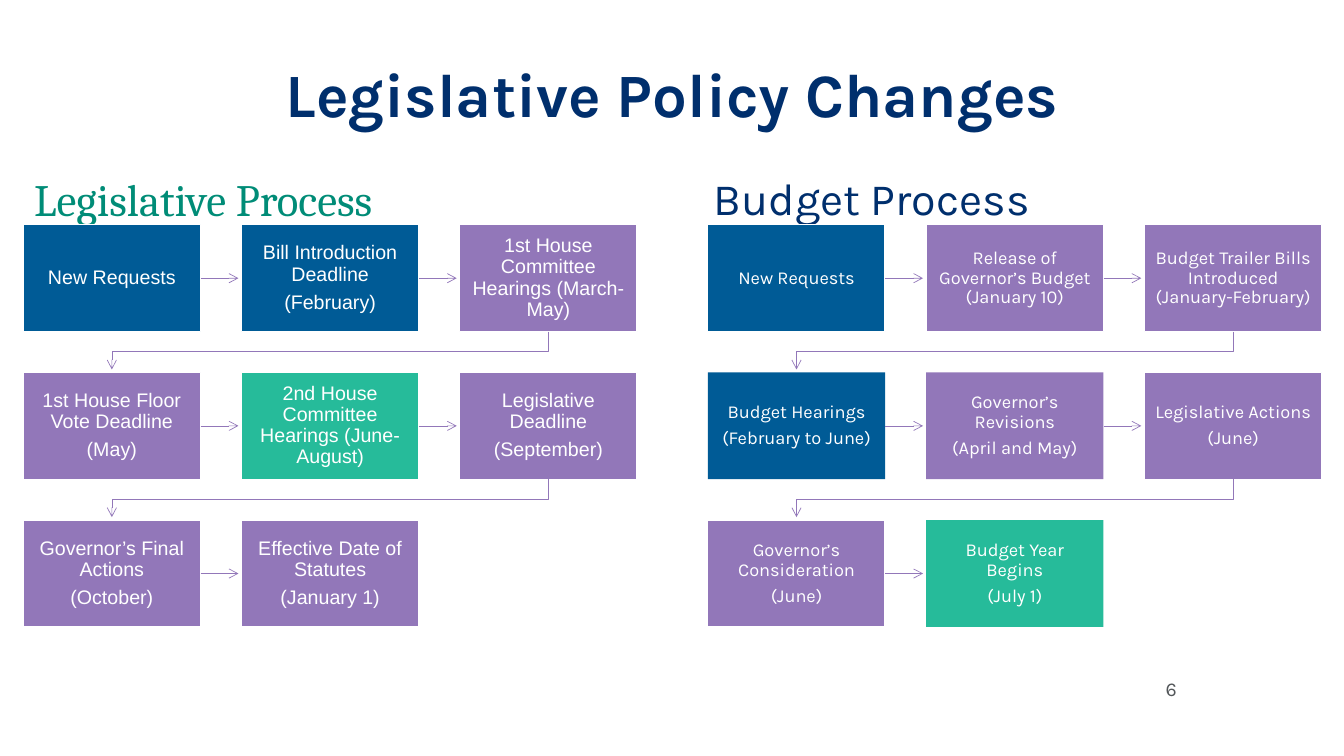
from lxml import etree
from pptx import Presentation
from pptx.dml.color import RGBColor
from pptx.enum.shapes import MSO_CONNECTOR, MSO_SHAPE
from pptx.enum.text import MSO_ANCHOR, PP_ALIGN
from pptx.oxml.ns import qn
from pptx.util import Inches, Pt

LEFT, CENTER, RIGHT = PP_ALIGN.LEFT, PP_ALIGN.CENTER, PP_ALIGN.RIGHT
MIDDLE, BOTTOM = MSO_ANCHOR.MIDDLE, MSO_ANCHOR.BOTTOM
RECT, STRAIGHT = MSO_SHAPE.RECTANGLE, MSO_CONNECTOR.STRAIGHT

BLUE, PURPLE, GREEN = "005B96", "9277B9", "26BB9A"
NAVY, TEAL, GREY, WHITE = "002F6D", "008C77", "53575A", "FFFFFF"

COLS = 3
BOX_W, BOX_H = 1.76, 1.06
STEP_X, STEP_Y = 4.33 / 2, 2.93 / 2
GAP = 0.03  # space between an arrow tip and the next box
DROP = 0.2  # fall of a bent arrow before it turns left

# Each step: fill, has outline, paragraphs
LAWS = [
    (BLUE, True, ["New Requests"]),
    (BLUE, True, ["Bill Introduction Deadline", "(February)"]),
    (PURPLE, True, ["1st House Committee Hearings (March-May)"]),
    (PURPLE, True, ["1st House Floor Vote Deadline", "(May)"]),
    (GREEN, True, ["2nd House Committee Hearings (June-August)"]),
    (PURPLE, True, ["Legislative Deadline", "(September)"]),
    (PURPLE, True, ["Governor’s Final Actions", "(October)"]),
    (PURPLE, True, ["Effective Date of Statutes", "(January 1)"]),
]
BUDGET = [
    (BLUE, True, ["New Requests"]),
    (PURPLE, True, ["Release of Governor’s Budget\n(January 10)"]),
    (PURPLE, True, ["Budget Trailer Bills Introduced (January-February)"]),
    (BLUE, False, ["Budget Hearings", "(February to June)"]),
    (PURPLE, False, ["Governor’s Revisions", "(April and May)"]),
    (PURPLE, True, ["Legislative Actions", "(June)"]),
    (PURPLE, True, ["Governor’s Consideration", "(June)"]),
    (GREEN, False, ["Budget Year Begins", "(July 1)"]),
]


def rgb(color):
    return RGBColor.from_string(color)


def write(frame, texts, font, size, color, align=CENTER, anchor=MIDDLE,
          bold=False, inset=None):
    frame.word_wrap = True
    frame.vertical_anchor = anchor
    if inset is not None:
        frame.margin_left = frame.margin_right = Inches(inset)
        frame.margin_top = frame.margin_bottom = Inches(inset)
    for i, text in enumerate(texts):
        para = frame.paragraphs[0] if i == 0 else frame.add_paragraph()
        para.alignment = align
        para.line_spacing = 0.9
        para.space_before = Pt(0)
        para.space_after = Pt(0.35 * size if i < len(texts) - 1 else 0)
        for j, part in enumerate(text.split("\n")):
            if j:
                para.add_line_break()
            run = para.add_run()
            run.text = part
            run.font.name = font
            run.font.size = Pt(size)
            run.font.bold = bold
            run.font.color.rgb = rgb(color)


def label(slide, box, text, *style, **more):
    frame = slide.shapes.add_textbox(*map(Inches, box)).text_frame
    write(frame, [text], *style, **more)


def tip(shape):
    """Style a line as a thin arrow."""
    shape.line.color.rgb = rgb(PURPLE)
    shape.line.width = Pt(0.5)
    line = shape.line._get_or_add_ln()
    etree.SubElement(line, qn("a:tailEnd"), type="arrow")


def add_step(slide, x, y, step, font, size, inset):
    fill, edged, texts = step
    box = slide.shapes.add_shape(
        RECT, Inches(x), Inches(y), Inches(BOX_W), Inches(BOX_H))
    box.shadow.inherit = False
    box.fill.solid()
    box.fill.fore_color.rgb = rgb(fill)
    if edged:
        box.line.color.rgb = rgb(WHITE)
        box.line.width = Pt(1)
    else:
        box.line.fill.background()
    write(box.text_frame, texts, font, size, WHITE, inset=inset)
    return box


def add_arrow(slide, box, x, y):
    """Point from a box to its right neighbour."""
    mid = Inches(y + BOX_H / 2)
    arrow = slide.shapes.add_connector(
        STRAIGHT, Inches(x + BOX_W), mid, Inches(x + STEP_X - GAP), mid)
    arrow.begin_connect(box, 3)
    tip(arrow)
    etree.SubElement(arrow._element.spPr, qn("a:effectLst"))


def add_bend(slide, x, y):
    """Lead from the last box of a row to the first of the next."""
    start = x + BOX_W / 2
    end = start - (COLS - 1) * STEP_X
    top = y + BOX_H
    turn = top + DROP
    pen = slide.shapes.build_freeform(Inches(start), Inches(top))
    pen.add_line_segments(
        [(Inches(start), Inches(turn)), (Inches(end), Inches(turn)),
         (Inches(end), Inches(y + STEP_Y - GAP))], close=False)
    bend = pen.convert_to_shape()
    bend.shadow.inherit = False
    bend.fill.background()
    tip(bend)


def add_flow(slide, left, top, steps, font, size, inset):
    for i, step in enumerate(steps):
        row, col = divmod(i, COLS)
        x, y = left + col * STEP_X, top + row * STEP_Y
        box = add_step(slide, x, y, step, font, size, inset)
        if i == len(steps) - 1:
            break
        if col < COLS - 1:
            add_arrow(slide, box, x, y)
        else:
            add_bend(slide, x, y)


def main():
    deck = Presentation()
    deck.slide_width, deck.slide_height = Inches(13.33), Inches(7.5)
    slide = deck.slides.add_slide(deck.slide_layouts[6])

    label(slide, (0.92, 0.24, 11.5, 1.45), "Legislative Policy Changes",
          "Karla", 44, NAVY, bold=True)
    label(slide, (0.24, 1.62, 4.3, 0.67), "Legislative Process",
          "Cambria", 32, TEAL, LEFT, BOTTOM)
    label(slide, (6.98, 1.61, 4.3, 0.67), "Budget Process",
          "Karla", 32, NAVY, LEFT, BOTTOM)
    add_flow(slide, 0.23, 2.23, LAWS, "Arial", 14, 0.11)
    add_flow(slide, 7.02, 2.23, BUDGET, "Karla", 13, 0.1)
    label(slide, (9.42, 6.69, 2.35, 0.31), "6", "Karla", 14, GREY, RIGHT)

    deck.save("out.pptx")


if __name__ == "__main__":
    main()
